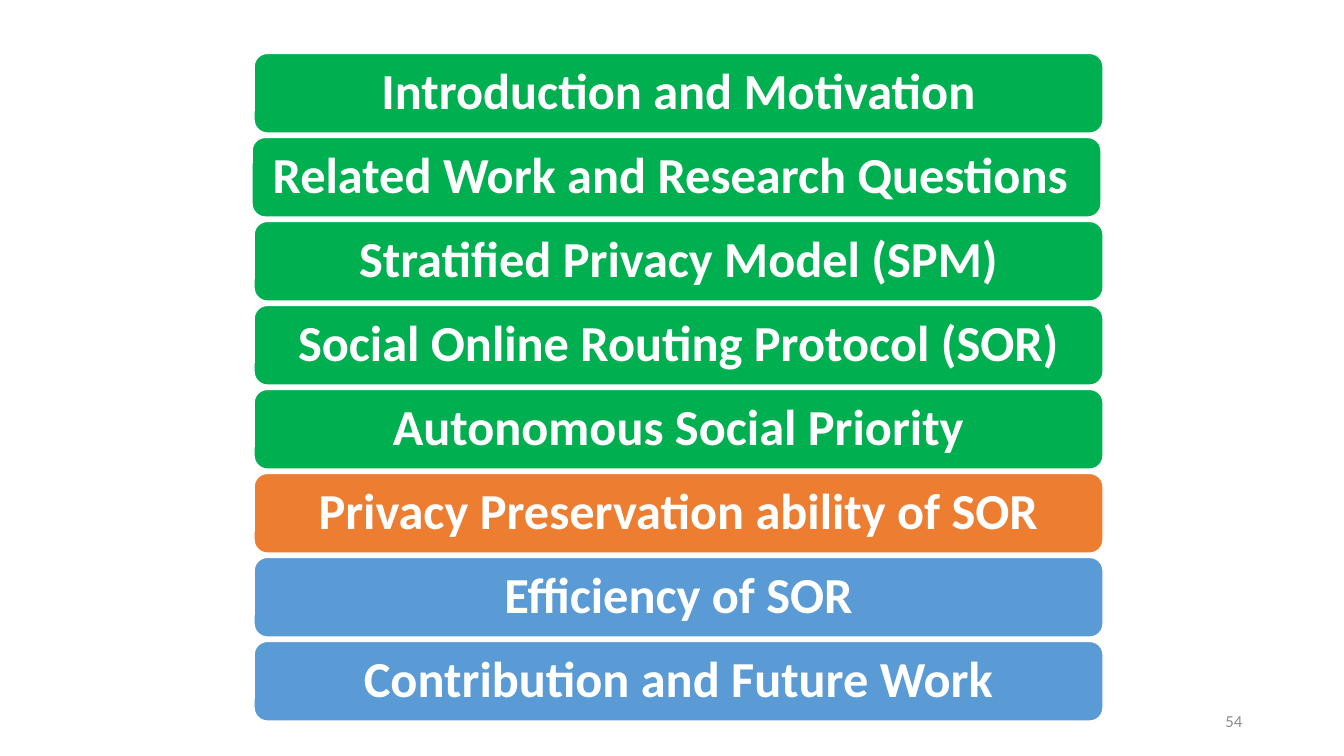
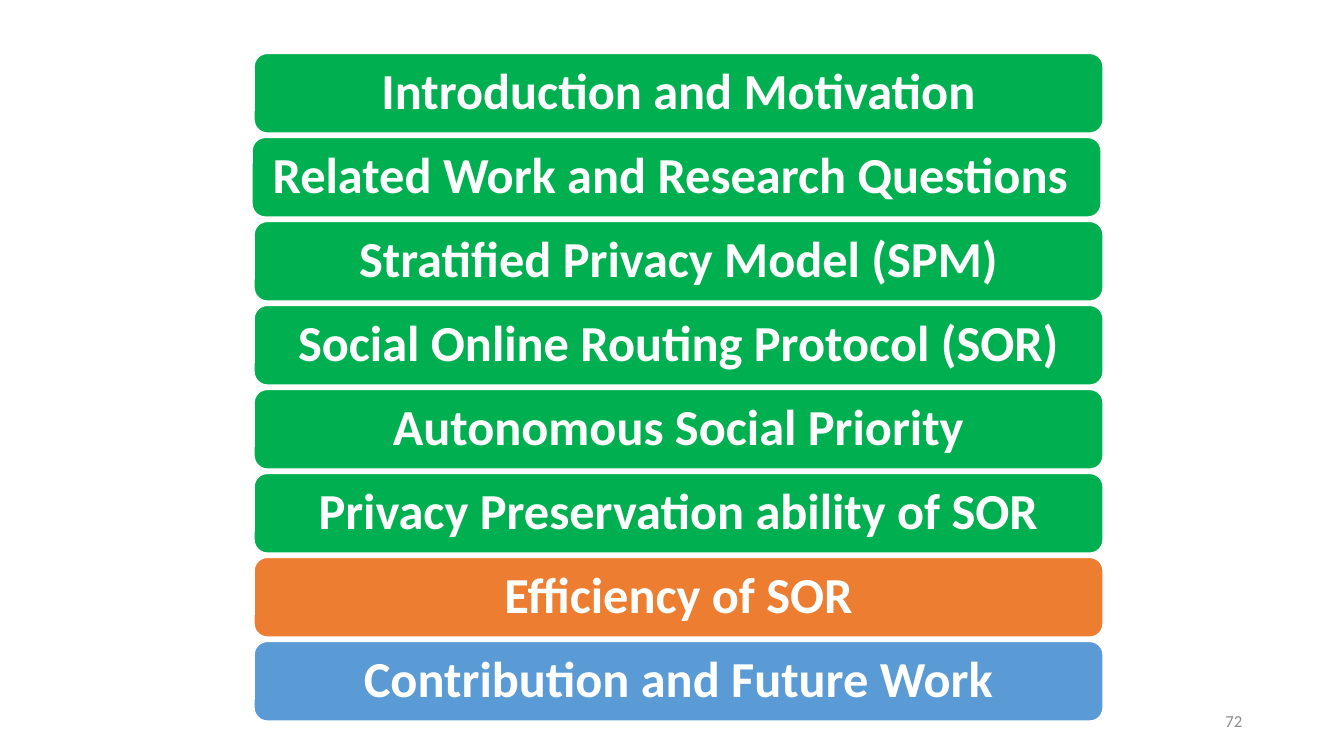
from pptx import Presentation
from pptx.dml.color import RGBColor
from pptx.enum.shapes import MSO_SHAPE
from pptx.enum.text import MSO_ANCHOR, PP_ALIGN
from pptx.util import Inches, Pt

ROUND = MSO_SHAPE.ROUNDED_RECTANGLE
MIDDLE = MSO_ANCHOR.MIDDLE
CENTER, RIGHT = PP_ALIGN.CENTER, PP_ALIGN.RIGHT

WIDTH, HEIGHT = 13.33, 7.5
ROW = HEIGHT / 9  # pitch of the agenda bars
TOP, LEFT = 0.53, 2.52
BAR_W, BAR_H = 8.42, 0.79
FONT = "Calibri"
COLORS = {
    "done": "00B050",
    "now": "ED7D31",
    "next": "5B9BD5",
    "white": "FFFFFF",
    "gray": "8C8C8C",
}

# Topic, shift of its bar, shift of the text within the bar
TOPICS = [
    ("Introduction and Motivation", 0, 0),
    ("Related Work and Research Questions", -0.02, -0.06),
    ("Stratified Privacy Model (SPM)", 0, 0),
    ("Social Online Routing Protocol (SOR)", 0, 0),
    ("Autonomous Social Priority", 0, 0),
    ("Privacy Preservation ability of SOR", 0, 0),
    ("Efficiency of SOR", 0, 0),
    ("Contribution and Future Work", 0, 0),
]
# Page number, index of the current topic
PAGES = [(54, 5), (72, 6)]


def color(name):
    return RGBColor.from_string(COLORS[name])


class Deck:
    def __init__(self):
        self.prs = Presentation()
        self.prs.slide_width = Inches(WIDTH)
        self.prs.slide_height = Inches(HEIGHT)
        self.slide = None

    def start(self):
        blank = self.prs.slide_layouts[6]
        self.slide = self.prs.slides.add_slide(blank)

    def label(self, shape, text, size, tint, align, bold=False):
        frame = shape.text_frame
        frame.word_wrap = True
        frame.vertical_anchor = MIDDLE
        para = frame.paragraphs[0]
        para.text = text
        para.alignment = align
        font = para.font
        font.name, font.size, font.bold = FONT, Pt(size), bold
        font.color.rgb = color(tint)
        return frame

    def bar(self, row, text, state, shift, nudge):
        bar = self.slide.shapes.add_shape(
            ROUND, Inches(LEFT + shift), Inches(TOP + row * ROW),
            Inches(BAR_W), Inches(BAR_H))
        bar.shadow.inherit = False
        bar.fill.solid()
        bar.fill.fore_color.rgb = color(state)
        bar.line.color.rgb = color("white")
        bar.line.width = Pt(1)
        frame = self.label(bar, text, 36, "white", CENTER, True)
        frame.paragraphs[0].line_spacing = 0.9
        frame.margin_left = Inches(0.19 + nudge)
        frame.margin_right = Inches(0.19 - nudge)
        frame.margin_top = frame.margin_bottom = Inches(0.07)

    def number(self, page):
        box = self.slide.shapes.add_textbox(
            Inches(9.42), Inches(6.95), Inches(3), Inches(0.4))
        self.label(box, str(page), 12, "gray", RIGHT)

    def agenda(self, page, now):
        self.start()
        for row, (text, shift, nudge) in enumerate(TOPICS):
            state = "done" if row < now else "now" if row == now else "next"
            self.bar(row, text, state, shift, nudge)
        self.number(page)


def main():
    deck = Deck()
    for page, now in PAGES:
        deck.agenda(page, now)
    deck.prs.save("out.pptx")


if __name__ == "__main__":
    main()
